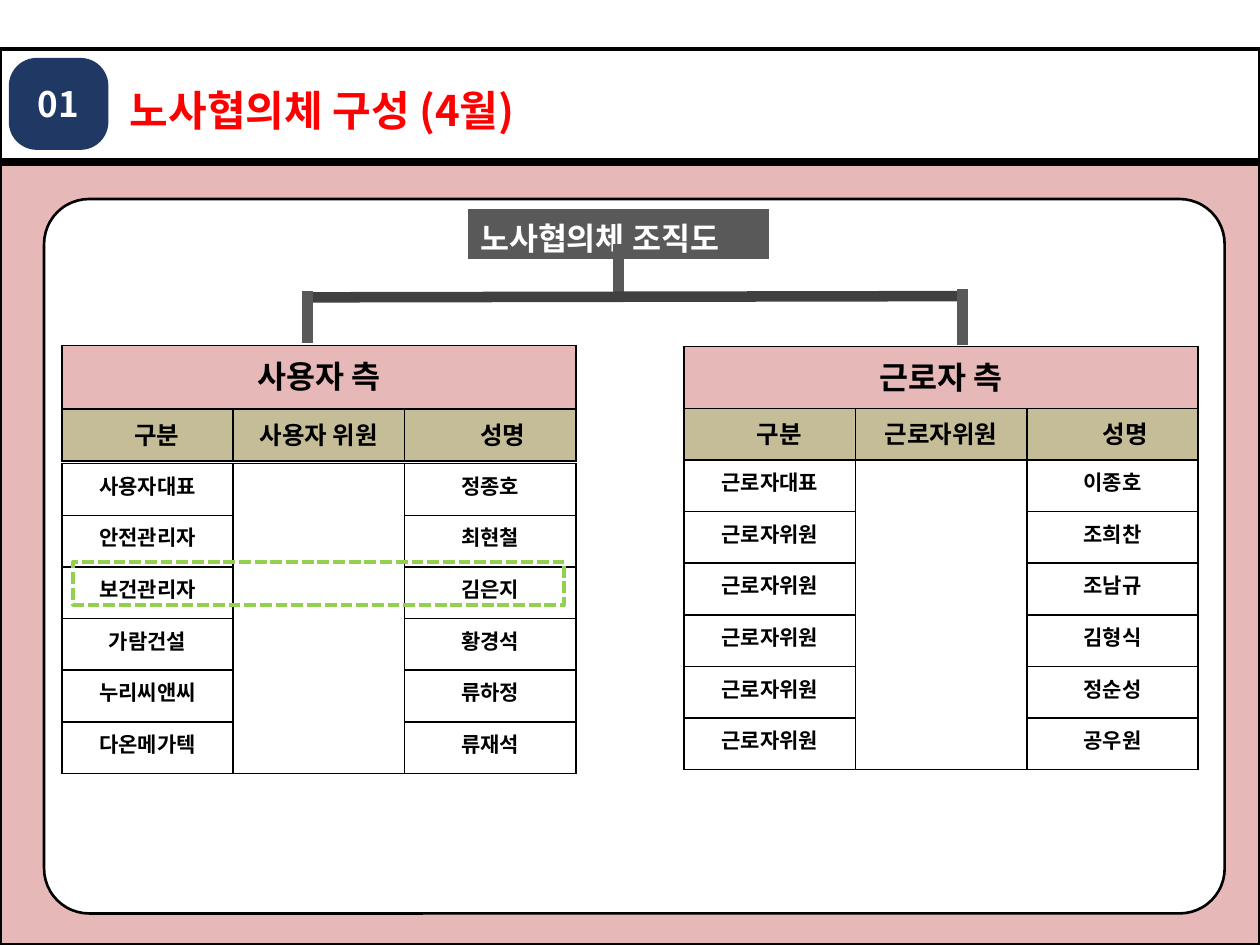
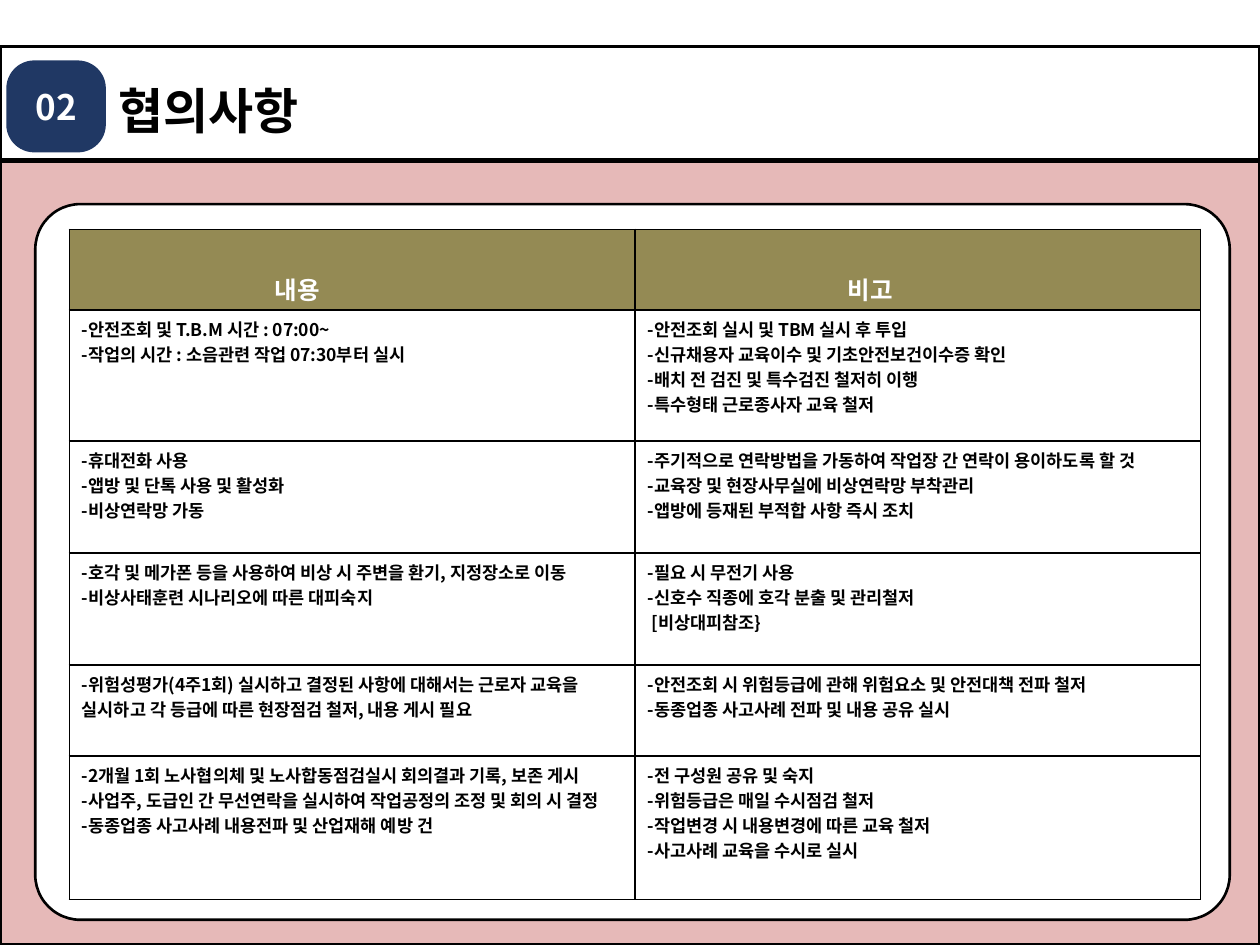
from lxml.etree import SubElement
from pptx import Presentation
from pptx.dml.color import RGBColor
from pptx.enum.dml import MSO_LINE_DASH_STYLE as Dash
from pptx.enum.shapes import MSO_CONNECTOR as Connector, MSO_SHAPE as Shape
from pptx.enum.text import MSO_ANCHOR as Anchor, MSO_AUTO_SIZE as AutoSize, PP_ALIGN as Align
from pptx.oxml import parse_xml
from pptx.oxml.ns import nsdecls, qn
from pptx.util import Inches, Pt

FONT = "Noto Sans CJK KR"
BLACK = RGBColor(0x00, 0x00, 0x00)
WHITE = RGBColor(0xFF, 0xFF, 0xFF)
RED = RGBColor(0xFF, 0x00, 0x00)
PINK = RGBColor(0xE6, 0xB9, 0xB8)
NAVY = RGBColor(0x20, 0x38, 0x64)
KHAKI = RGBColor(0xC4, 0xBD, 0x97)
OLIVE = RGBColor(0x94, 0x8A, 0x54)
GREEN = RGBColor(0x92, 0xD0, 0x50)
GREY = RGBColor(0x59, 0x59, 0x59)
DARK_GREY = RGBColor(0x40, 0x40, 0x40)

WIDTH, HEIGHT = 10, 7.5
BODY_TOP = 1.27
BAND_HEIGHT = 0.91
COLUMN, ROW = 1.36, 0.41  # grid of the member tables


def write_text(frame, text, size=12, colour=BLACK, align=Align.LEFT):
    """Fill a text frame, one paragraph per line, in the bold shared font."""
    frame.clear()
    frame.word_wrap = True
    for number, line in enumerate(text.split("\n")):
        paragraph = frame.add_paragraph() if number else frame.paragraphs[0]
        paragraph.alignment = align
        run = paragraph.add_run()
        run.text = line
        run.font.size, run.font.bold = Pt(size), True
        run.font.color.rgb = colour
        run.font.name = FONT
        SubElement(run.font._element, qn("a:ea"), typeface=FONT)


def add_grid(slide, left, top, widths, heights, rows, fill=WHITE, border=BLACK, **text_format):
    """Add a bordered table; None marks a cell without text."""
    table = slide.shapes.add_table(
        len(heights), len(widths), Inches(left), Inches(top),
        Inches(sum(widths)), Inches(sum(heights))).table
    for column, width in zip(table.columns, widths):
        column.width = Inches(width)
    for row, height, texts in zip(table.rows, heights, rows):
        row.height = Inches(height)
        for cell, text in zip(row.cells, texts):
            cell.fill.solid()
            cell.fill.fore_color.rgb = fill
            for position, side in enumerate("LRTB"):
                cell._tc.get_or_add_tcPr().insert(position, parse_xml(
                    f'<a:ln{side} {nsdecls("a")} w="12700"><a:solidFill>'
                    f'<a:srgbClr val="{border}"/></a:solidFill></a:ln{side}>'))
            if text:
                write_text(cell.text_frame, text, **text_format)
    return table


presentation = Presentation()
presentation.slide_width, presentation.slide_height = Inches(WIDTH), Inches(HEIGHT)

# Shared background, title band, white panel and number badge
slide_frames = [
    dict(number="01", title="노사협의체 구성 (4월)", size=24, colour=RED, band_top=0.39,
         title_box=(0.93, 0.62, 8.69, 0.5), panel=(0.35, 1.58, 9.37, 5.67), badge=(0.07, 0.46)),
    dict(number="02", title="협의사항", size=28, colour=BLACK, band_top=0.37,
         title_box=(0.84, 0.59, 8.69, 0.57), panel=(0.28, 1.62, 9.48, 5.68), badge=(0.05, 0.48)),
]
for look in slide_frames:
    slide = presentation.slides.add_slide(presentation.slide_layouts[5])
    title = slide.shapes.title
    title.left, title.top, title.width, title.height = map(Inches, look["title_box"])
    write_text(title.text_frame, look["title"], size=look["size"], colour=look["colour"])
    title.text_frame.auto_size = AutoSize.NONE
    title.text_frame.vertical_anchor = Anchor.MIDDLE

    parts = [
        (Shape.RECTANGLE, (0, BODY_TOP, WIDTH, HEIGHT - BODY_TOP), PINK, 2, None),
        (Shape.RECTANGLE, (0, look["band_top"], WIDTH, BAND_HEIGHT), None, 2, None),
        (Shape.ROUNDED_RECTANGLE, look["panel"], WHITE, 1.5, 0.063),
        (Shape.ROUNDED_RECTANGLE, (*look["badge"], 0.79, 0.73), NAVY, None, 0.304),
    ]
    for kind, box, fill, line_width, rounding in parts:
        shape = slide.shapes.add_shape(kind, *map(Inches, box))
        shape.shadow.inherit = False
        if fill is None:
            shape.fill.background()
        else:
            shape.fill.solid()
            shape.fill.fore_color.rgb = fill
        if line_width is None:
            shape.line.fill.background()
        else:
            shape.line.color.rgb = BLACK
            shape.line.width = Pt(line_width)
        if rounding:
            shape.adjustments[0] = rounding
    badge = shape
    write_text(badge.text_frame, look["number"], size=20, colour=WHITE, align=Align.CENTER)
    badge.text_frame.vertical_anchor = Anchor.MIDDLE

council_slide, agenda_slide = presentation.slides

# Council chart: heading and branches
heading = add_grid(council_slide, 3.71, 1.65, [2.4], [0.39], [["노사협의체 조직도"]],
                   fill=GREY, border=WHITE, size=18, colour=WHITE)
heading.cell(0, 0).margin_bottom = 0

branches = [
    (4.91, 1.94, 4.91, 2.35, GREY),
    (2.44, 2.36, 7.64, 2.35, DARK_GREY),
    (2.44, 2.31, 2.44, 2.72, GREY),
    (7.64, 2.29, 7.64, 2.74, GREY),
]
for *ends, colour in branches:
    branch = council_slide.shapes.add_connector(Connector.STRAIGHT, *map(Inches, ends))
    branch.line.color.rgb = colour
    branch.line.width = Pt(6)
    SubElement(branch._element.spPr, qn("a:effectLst"))

# Council members: side name, column heads and people
sides = [
    dict(name="사용자 측", member="사용자 위원", left=0.49, tops=(2.74, 3.25, 3.68), people=[
        ("사용자대표", "정종호"), ("안전관리자", "최현철"), ("보건관리자", "김은지"),
        ("가람건설", "황경석"), ("누리씨앤씨", "류하정"), ("다온메가텍", "류재석")]),
    dict(name="근로자 측", member="근로자위원", left=5.43, tops=(2.75, 3.24, 3.65), people=[
        ("근로자대표", "이종호"), ("근로자위원", "조희찬"), ("근로자위원", "조남규"),
        ("근로자위원", "김형식"), ("근로자위원", "정순성"), ("근로자위원", "공우원")]),
]
for side in sides:
    left, (name_top, heads_top, people_top) = side["left"], side["tops"]
    add_grid(council_slide, left, name_top, [3 * COLUMN], [0.5], [[side["name"]]],
             fill=PINK, size=18, align=Align.CENTER)
    heads = add_grid(council_slide, left, heads_top, [COLUMN] * 3, [ROW],
                     [["구분", side["member"], "성명"]],
                     fill=KHAKI, size=14, align=Align.CENTER)
    for column, indent in enumerate((0.25, 0.1, 0.3)):
        heads.cell(0, column).margin_left = Inches(indent)
    people = side["people"]
    members = add_grid(council_slide, left, people_top, [COLUMN] * 3, [ROW] * len(people),
                       [(role, None, person) for role, person in people], align=Align.CENTER)
    members.cell(0, 1).merge(members.cell(len(people) - 1, 1))

# Dashed marker around the health manager
marker = council_slide.shapes.add_shape(Shape.RECTANGLE, *map(Inches, (0.58, 4.46, 3.9, 0.34)))
marker.shadow.inherit = False
marker.fill.background()
marker.line.color.rgb = GREEN
marker.line.width = Pt(2.25)
marker.line.dash_style = Dash.SQUARE_DOT

# Agenda table
agenda_rows = [
    ("내용", "비고"),
    ("-안전조회 및 T.B.M 시간 : 07:00~\n"
     "-작업의 시간 : 소음관련 작업 07:30부터 실시",
     "-안전조회 실시 및 TBM 실시 후 투입\n"
     "-신규채용자 교육이수 및 기초안전보건이수증 확인\n"
     "-배치 전 검진 및 특수검진 철저히 이행\n"
     "-특수형태 근로종사자 교육 철저"),
    ("-휴대전화 사용\n"
     "-앱방 및 단톡 사용 및 활성화\n"
     "-비상연락망 가동",
     "-주기적으로 연락방법을 가동하여 작업장 간 연락이 용이하도록 할 것\n"
     "-교육장 및 현장사무실에 비상연락망 부착관리\n"
     "-앱방에 등재된 부적합 사항 즉시 조치"),
    ("-호각 및 메가폰 등을 사용하여 비상 시 주변을 환기, 지정장소로 이동\n"
     "-비상사태훈련 시나리오에 따른 대피숙지",
     "-필요 시 무전기 사용\n"
     "-신호수 직종에 호각 분출 및 관리철저\n"
     " [비상대피참조}"),
    ("-위험성평가(4주1회) 실시하고 결정된 사항에 대해서는 근로자 교육을 "
     "실시하고 각 등급에 따른 현장점검 철저, 내용 게시 필요",
     "-안전조회 시 위험등급에 관해 위험요소 및 안전대책 전파 철저\n"
     "-동종업종 사고사례 전파 및 내용 공유 실시"),
    ("-2개월 1회 노사협의체 및 노사합동점검실시 회의결과 기록, 보존 게시\n"
     "-사업주, 도급인 간 무선연락을 실시하여 작업공정의 조정 및 회의 시 결정\n"
     "-동종업종 사고사례 내용전파 및 산업재해 예방 건",
     "-전 구성원 공유 및 숙지\n"
     "-위험등급은 매일 수시점검 철저\n"
     "-작업변경 시 내용변경에 따른 교육 철저\n"
     "-사고사례 교육을 수시로 실시"),
]
agenda = add_grid(agenda_slide, 0.55, 1.82, [4.49] * 2, [0.64, 1.04, 0.89, 0.89, 0.72, 1.14],
                  agenda_rows, size=10)
for cell, text, indent in zip(agenda.rows[0].cells, agenda_rows[0], (1.63, 1.69)):
    cell.fill.fore_color.rgb = OLIVE
    cell.vertical_anchor = Anchor.BOTTOM
    cell.margin_left, cell.margin_bottom = Inches(indent), Inches(0.03)
    write_text(cell.text_frame, text, size=14, colour=WHITE)

presentation.save("out.pptx")
